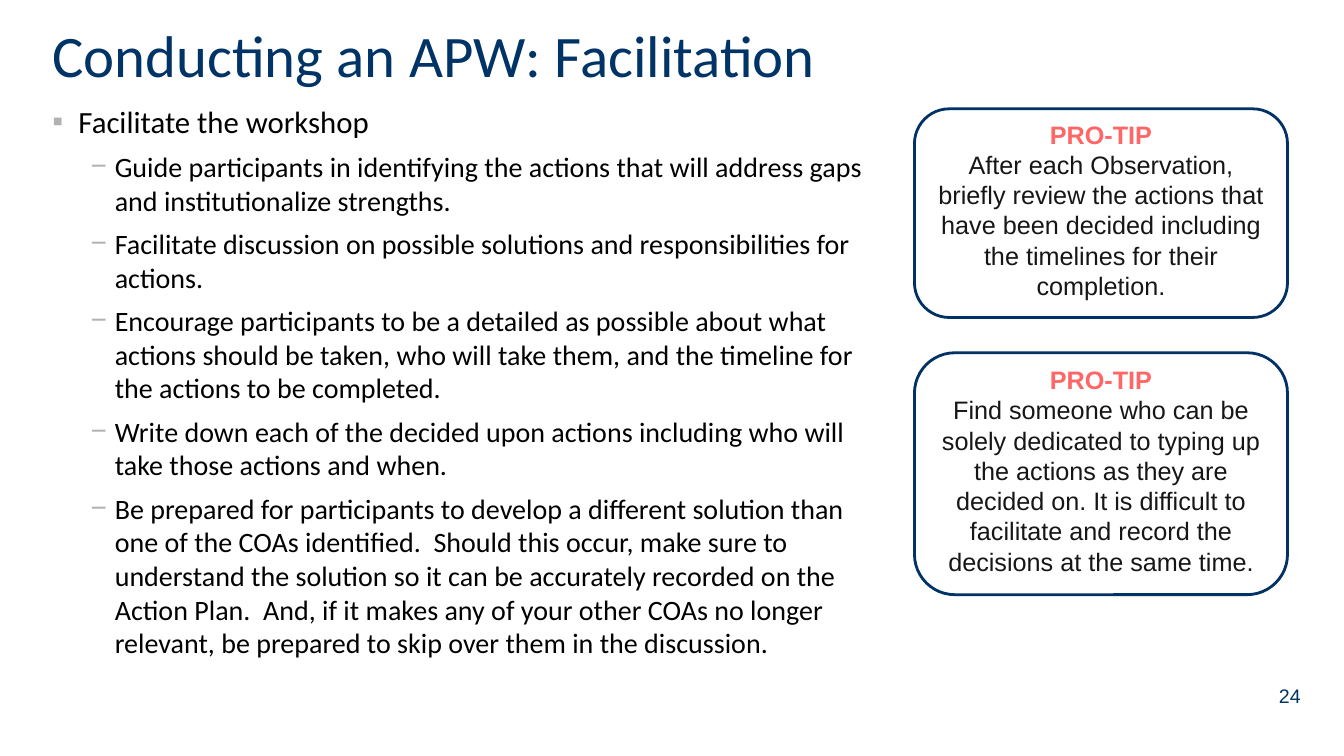
import pptx
import pptx.util
import pptx.dml.color
import pptx.enum.shapes
import pptx.enum.text
import lxml.etree

SLIDE_WIDTH, SLIDE_HEIGHT = 13.33, 7.5
COLUMNS, ROWS = 1333, 750
NAVY, OUTLINE, CORAL, INK = "003366", "003265", "FF6666", "161616"
BLACK, GREY, WHITE = "000000", "B2B2B2", "FFFFFF"
ALIGN = pptx.enum.text.PP_ALIGN
ANCHOR = pptx.enum.text.MSO_ANCHOR

ACTIONS = [
    "Guide participants in identifying the actions that will address gaps and institutionalize strengths.",
    "Facilitate discussion on possible solutions and responsibilities for actions.",
    "Encourage participants to be a detailed as possible about what actions should be taken, "
    "who will take them, and the timeline for the actions to be completed.",
    "Write down each of the decided upon actions including who will take those actions and when.",
    "Be prepared for participants to develop a different solution than one of the COAs identified.  "
    "Should this occur, make sure to understand the solution so it can be accurately recorded on the "
    "Action Plan.  And, if it makes any of your other COAs no longer relevant, be prepared to skip "
    "over them in the discussion.",
]
TIPS = [
    (108, 207, "After each Observation, briefly review the actions that have been decided "
               "including the timelines for their completion."),
    (350, 240, "Find someone who can be solely dedicated to typing up the actions as they are "
               "decided on. It is difficult to facilitate and record the decisions at the same time."),
]


def color(value):
    return pptx.dml.color.RGBColor.from_string(value)


def area(column, row, columns, rows):
    across = SLIDE_WIDTH / COLUMNS
    down = SLIDE_HEIGHT / ROWS
    return [pptx.util.Inches(length) for length in
            (column * across, row * down, columns * across, rows * down)]


def add_run(paragraph, words, size, font, ink, bold=False):
    run = paragraph.add_run()
    run.text = words
    run.font.size = pptx.util.Pt(size)
    run.font.name = font
    run.font.bold = bold
    run.font.color.rgb = color(ink)


def add_paragraph(frame, first, align=ALIGN.LEFT):
    paragraph = frame.paragraphs[0] if first else frame.add_paragraph()
    paragraph.alignment = align
    return paragraph


def add_text_frame(slide, place, anchor=ANCHOR.TOP):
    frame = slide.shapes.add_textbox(*area(*place)).text_frame
    frame.word_wrap = True
    frame.vertical_anchor = anchor
    return frame


def add_label(slide, place, words, size, font, align, anchor):
    frame = add_text_frame(slide, place, anchor)
    add_run(add_paragraph(frame, True, align), words, size, font, NAVY)


def set_bullet(paragraph, mark, margin, hanging):
    properties = paragraph._p.get_or_add_pPr()
    properties.set("marL", str(pptx.util.Inches(margin)))
    properties.set("indent", str(-pptx.util.Inches(hanging)))
    tint = lxml.etree.SubElement(properties, pptx.oxml.ns.qn("a:buClr"))
    lxml.etree.SubElement(tint, pptx.oxml.ns.qn("a:srgbClr"), val=GREY)
    lxml.etree.SubElement(properties, pptx.oxml.ns.qn("a:buFont"), typeface="Arial")
    lxml.etree.SubElement(properties, pptx.oxml.ns.qn("a:buChar"), char=mark)


def add_outline(slide, place, heading, actions):
    frame = add_text_frame(slide, place)
    topic = add_paragraph(frame, True)
    topic.space_before = pptx.util.Pt(15)
    set_bullet(topic, "▪", 0.26, 0.26)
    add_run(topic, heading, 22, "Calibri", BLACK)
    for action in actions:
        step = add_paragraph(frame, False)
        step.level = 1
        step.space_before = pptx.util.Pt(7)
        set_bullet(step, "−", 0.62, 0.24)
        add_run(step, action, 20, "Calibri", BLACK)


def add_tip(slide, place, advice):
    card = slide.shapes.add_shape(
        pptx.enum.shapes.MSO_SHAPE.ROUNDED_RECTANGLE, *area(*place))
    card.shadow.inherit = False
    card.fill.solid()
    card.fill.fore_color.rgb = color(WHITE)
    card.line.color.rgb = color(OUTLINE)
    card.line.width = pptx.util.Pt(2)
    frame = card.text_frame
    frame.word_wrap = True
    frame.auto_size = pptx.enum.text.MSO_AUTO_SIZE.SHAPE_TO_FIT_TEXT
    frame.vertical_anchor = ANCHOR.TOP
    frame.margin_top = 0
    add_run(add_paragraph(frame, True, ALIGN.CENTER), "PRO-TIP", 18, "Arial", CORAL, True)
    add_run(add_paragraph(frame, False, ALIGN.CENTER), advice, 18, "Arial", INK)


def main():
    deck = pptx.Presentation()
    deck.slide_width = pptx.util.Inches(SLIDE_WIDTH)
    deck.slide_height = pptx.util.Inches(SLIDE_HEIGHT)
    slide = deck.slides.add_slide(deck.slide_layouts[6])
    add_label(slide, (989, 674, 311, 52), "24", 14, "Arial", ALIGN.RIGHT, ANCHOR.TOP)
    add_label(slide, (42, 8, 1250, 92), "Conducting an APW: Facilitation", 42, "Calibri",
              ALIGN.LEFT, ANCHOR.MIDDLE)
    add_outline(slide, (42, 97, 852, 596), "Facilitate the workshop", ACTIONS)
    for row, rows, advice in TIPS:
        add_tip(slide, (907, row, 370, rows), advice)
    deck.save("out.pptx")


if __name__ == "__main__":
    main()
